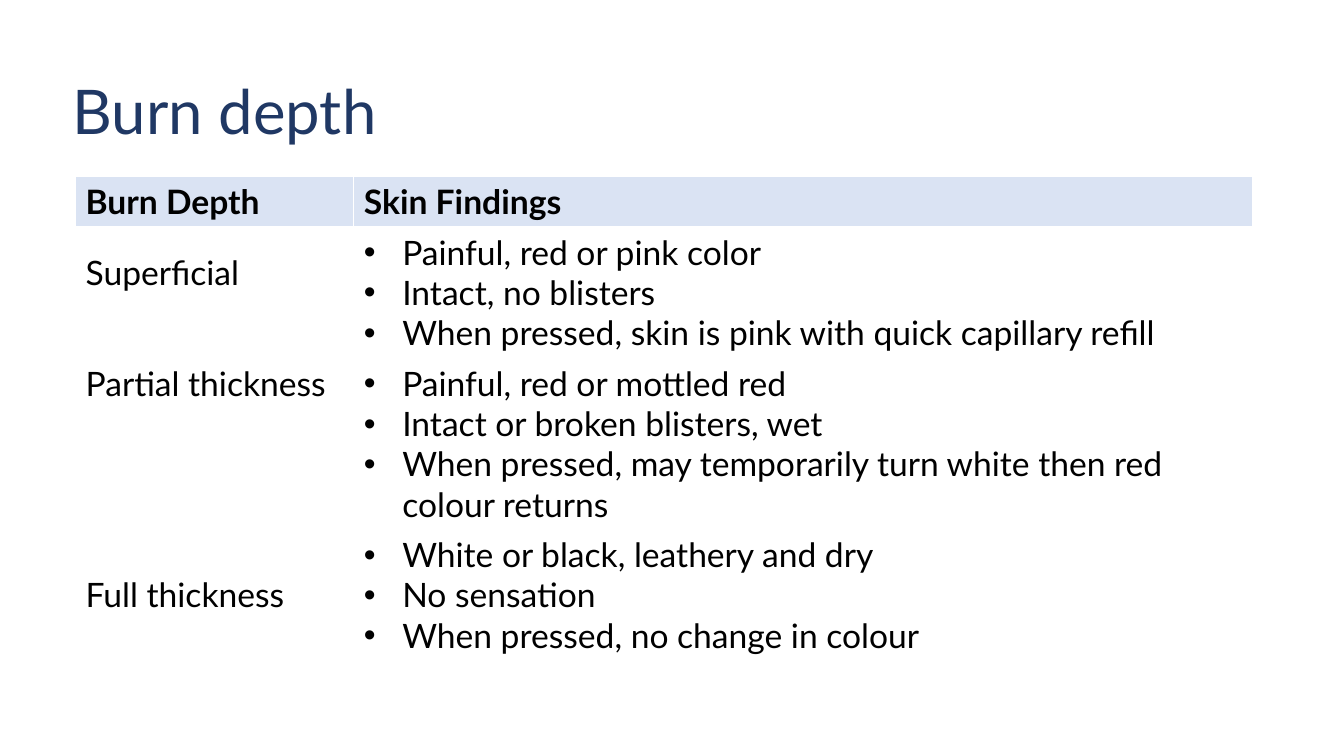
from lxml.etree import SubElement
from pptx import Presentation
from pptx.dml.color import RGBColor
from pptx.enum.text import MSO_ANCHOR as Anchor, PP_ALIGN as Align
from pptx.oxml.ns import qn
from pptx.util import Inches, Pt

# Content
TITLE = "Burn depth"
HEADS = ["Burn Depth", "Skin Findings"]
BURNS = [
    ("Superficial", Anchor.MIDDLE, [
        "Painful, red or pink color",
        "Intact, no blisters",
        "When pressed, skin is pink with quick capillary refill"]),
    ("Partial thickness", Anchor.TOP, [
        "Painful, red or mottled red",
        "Intact or broken blisters, wet",
        "When pressed, may temporarily turn white then red colour returns"]),
    ("Full thickness", Anchor.MIDDLE, [
        "White or black, leathery and dry",
        "No sensation",
        "When pressed, no change in colour"]),
]
WIDTHS = [2.76, 8.91]
HEIGHTS = [0.5, 1.3, 1.7, 1.3]
FONT, BLACK, NAVY, PALE = "Lato", "000000", "203864", "DAE3F3"
INDENT = 0.38


def color(code):
    return RGBColor.from_string(code)


def style(par, size, code, bold=False):
    font = par.font
    font.name, font.size, font.bold = FONT, Pt(size), bold
    font.color.rgb = color(code)


def bullet(par):
    props = par._p.get_or_add_pPr()
    props.set("marL", str(Inches(INDENT)))
    props.set("indent", str(-Inches(INDENT)))
    tint = SubElement(props, qn("a:buClr"))
    SubElement(tint, qn("a:srgbClr"), val=BLACK)
    SubElement(props, qn("a:buFont"), typeface="Arial")
    SubElement(props, qn("a:buChar"), char="•")


def fill_cell(cell, lines, anchor, head=False, dots=False):
    if head:
        cell.fill.solid()
        cell.fill.fore_color.rgb = color(PALE)
    else:
        cell.fill.background()
    cell.vertical_anchor = anchor
    cell.text = "\n".join(lines)
    for par in cell.text_frame.paragraphs:
        if dots:
            bullet(par)
        style(par, 24, BLACK, head)


deck = Presentation()
deck.slide_width, deck.slide_height = Inches(13.33), Inches(7.5)
slide = deck.slides.add_slide(deck.slide_layouts[5])

# Title
title = slide.shapes.title
title.left, title.top = Inches(0.62), Inches(0.41)
title.width, title.height = Inches(11.5), Inches(1.45)
title.text = TITLE
title.text_frame.vertical_anchor = Anchor.MIDDLE
par = title.text_frame.paragraphs[0]
par.alignment, par.line_spacing = Align.LEFT, 0.9
style(par, 44, NAVY)

# Table grid
table = slide.shapes.add_table(
    len(HEIGHTS), len(WIDTHS), Inches(0.75), Inches(1.75),
    Inches(sum(WIDTHS)), Inches(sum(HEIGHTS))).table
table.horz_banding = False
for col, width in zip(table.columns, WIDTHS):
    col.width = Inches(width)
for row, height in zip(table.rows, HEIGHTS):
    row.height = Inches(height)

# Header and findings
for c, head in enumerate(HEADS):
    fill_cell(table.cell(0, c), [head], Anchor.MIDDLE, head=True)
for r, (depth, anchor, signs) in enumerate(BURNS, 1):
    fill_cell(table.cell(r, 0), [depth], anchor)
    fill_cell(table.cell(r, 1), signs, anchor, dots=True)

# The first label sits half a line above the middle
table.cell(1, 0).margin_bottom = Inches(0.45)

deck.save("out.pptx")
